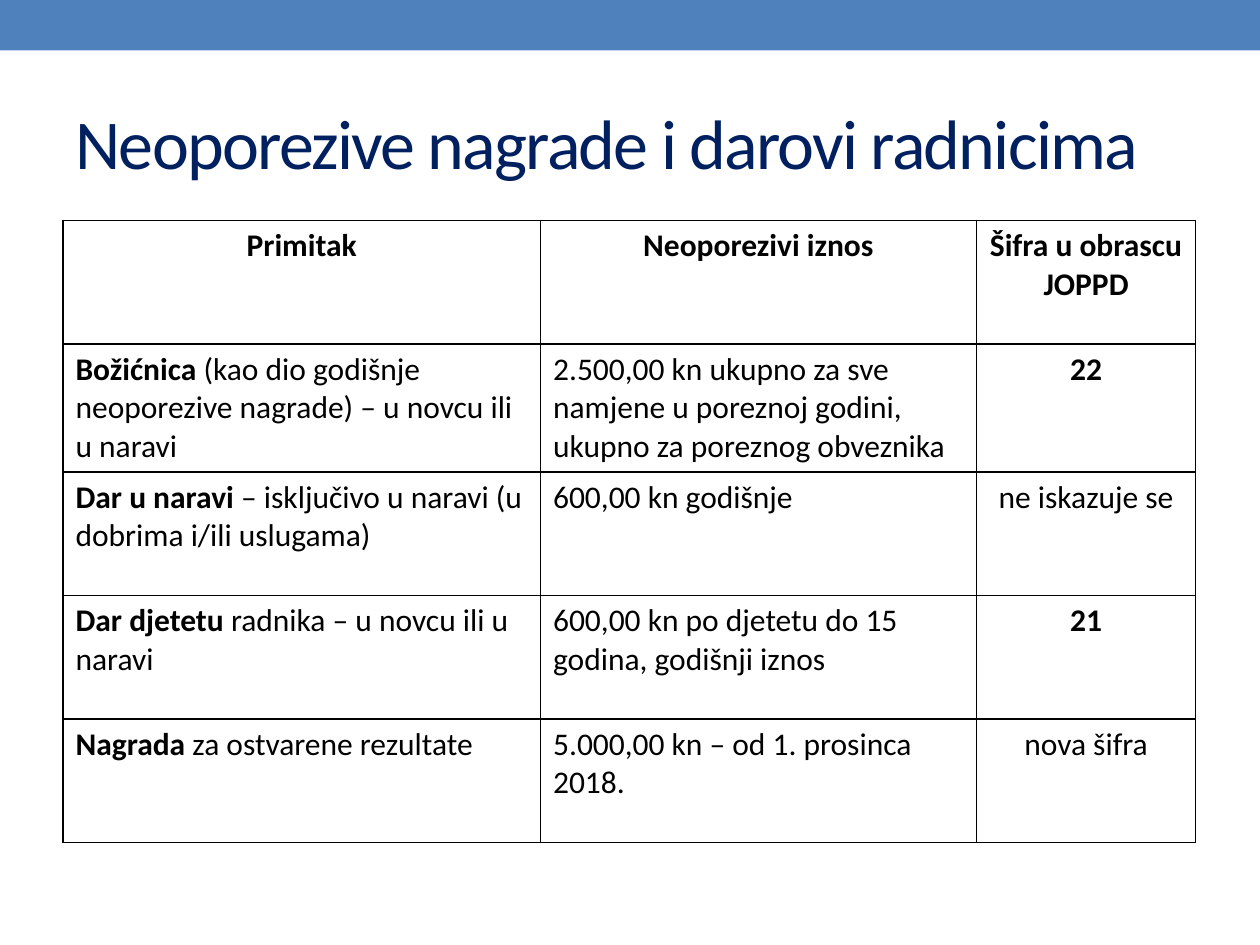
"""Builds a slide with a table of tax-free awards and gifts to employees."""
from dataclasses import dataclass
from lxml import etree
from pptx import Presentation
from pptx import util as u
from pptx.dml.color import RGBColor
from pptx.enum import shapes, text
from pptx.oxml import ns


@dataclass(frozen=True)
class Theme:
    font: str = "Calibri"
    band: str = "4F81BD"
    title: str = "002060"
    ink: str = "000000"
    head: int = 40
    body: int = 18


THEME = Theme()
COLS = (3.79, 3.46, 1.74)
ROW = 0.98
HEADS = ("Primitak", "Neoporezivi iznos", "Šifra u obrascu JOPPD")
ROWS = (
    ("Božićnica", " (kao dio godišnje neoporezive nagrade) – u novcu ili u naravi",
     "2.500,00 kn ukupno za sve namjene u poreznoj godini, ukupno za poreznog obveznika", "22"),
    ("Dar u naravi ", "– isključivo u naravi (u dobrima i/ili uslugama)",
     "600,00 kn godišnje", "ne iskazuje se"),
    ("Dar djetetu ", "radnika – u novcu ili u naravi",
     "600,00 kn po djetetu do 15 godina, godišnji iznos", "21"),
    ("Nagrada", " za ostvarene rezultate",
     "5.000,00 kn – od 1. prosinca 2018.", "nova šifra"),
)


def write(frame, words, size=THEME.body, color=THEME.ink, bold=False,
          align=text.PP_ALIGN.LEFT, track=None):
    """Add a run to the first paragraph of a frame."""
    para = frame.paragraphs[0]
    para.alignment = align
    run = para.add_run()
    run.text = words
    font = run.font
    font.name, font.size, font.bold = THEME.font, u.Pt(size), bold
    font.color.rgb = RGBColor.from_string(color)
    if track is not None:
        font._element.set("spc", str(track * 100))


def add_band(slide):
    """Draw the colour band along the top edge."""
    band = slide.shapes.add_shape(shapes.MSO_SHAPE.RECTANGLE, 0, 0,
                                  u.Inches(10), u.Inches(0.4))
    band.shadow.inherit = False
    band.fill.solid()
    band.fill.fore_color.rgb = RGBColor.from_string(THEME.band)
    band.line.fill.background()


def add_title(slide, words):
    """Place and fill the title placeholder."""
    title = slide.shapes.title
    title.left, title.top = u.Inches(0.5), u.Inches(0.58)
    title.width, title.height = u.Inches(9), u.Inches(1.08)
    frame = title.text_frame
    frame.vertical_anchor = text.MSO_ANCHOR.MIDDLE
    write(frame, words, THEME.head, THEME.title, track=-1)


def style(cell):
    """Give a cell no fill and a thin border on each side."""
    props = cell._tc.get_or_add_tcPr()
    for side in ("lnL", "lnR", "lnT", "lnB"):
        line = etree.SubElement(props, ns.qn("a:" + side), w=str(u.Pt(1)))
        fill = etree.SubElement(line, ns.qn("a:solidFill"))
        etree.SubElement(fill, ns.qn("a:srgbClr"), val=THEME.ink)
    cell.fill.background()


def add_grid(slide):
    """Build the table of payments, amounts and codes."""
    count = len(ROWS) + 1
    table = slide.shapes.add_table(count, len(COLS), u.Inches(0.5), u.Inches(1.75),
                                   u.Inches(sum(COLS)), u.Inches(ROW * count)).table
    table.horz_banding = False
    for col, width in zip(table.columns, COLS):
        col.width = u.Inches(width)
    for row in table.rows:
        row.height = u.Inches(ROW)
    for cell in table.iter_cells():
        style(cell)
    mid = text.PP_ALIGN.CENTER
    for col, words in enumerate(HEADS):
        write(table.cell(0, col).text_frame, words, bold=True, align=mid)
    for row, (name, note, sum_text, code) in enumerate(ROWS, 1):
        first, amount, last = (table.cell(row, col).text_frame for col in range(3))
        write(first, name, bold=True)
        write(first, note)
        write(amount, sum_text)
        write(last, code, bold=code.isdigit(), align=mid)


def main():
    """Build and save the slide."""
    deck = Presentation()
    deck.slide_width, deck.slide_height = u.Inches(10), u.Inches(7.5)
    slide = deck.slides.add_slide(deck.slide_layouts[5])
    add_band(slide)
    add_title(slide, "Neoporezive nagrade i darovi radnicima")
    add_grid(slide)
    deck.save("out.pptx")


if __name__ == "__main__":
    main()
